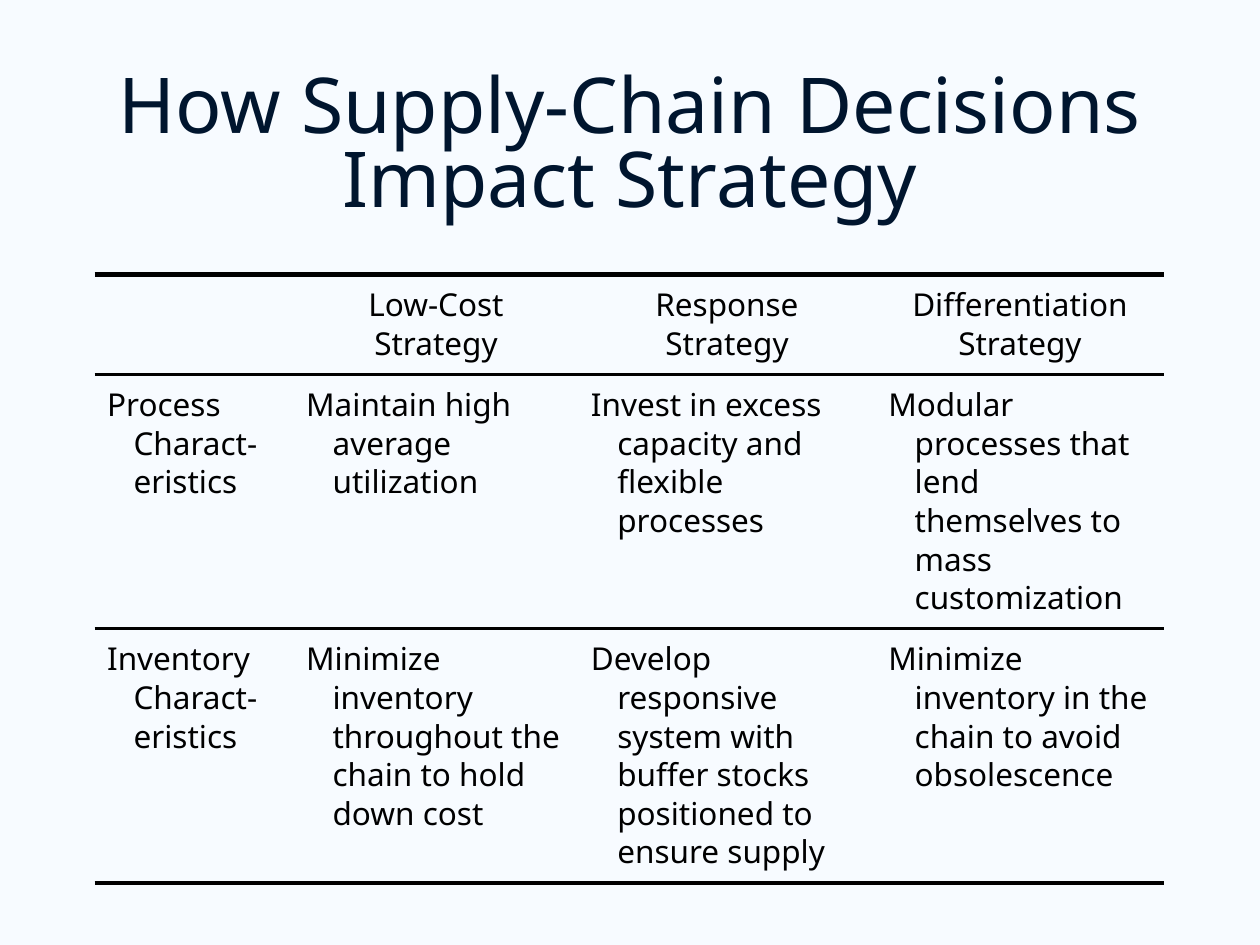
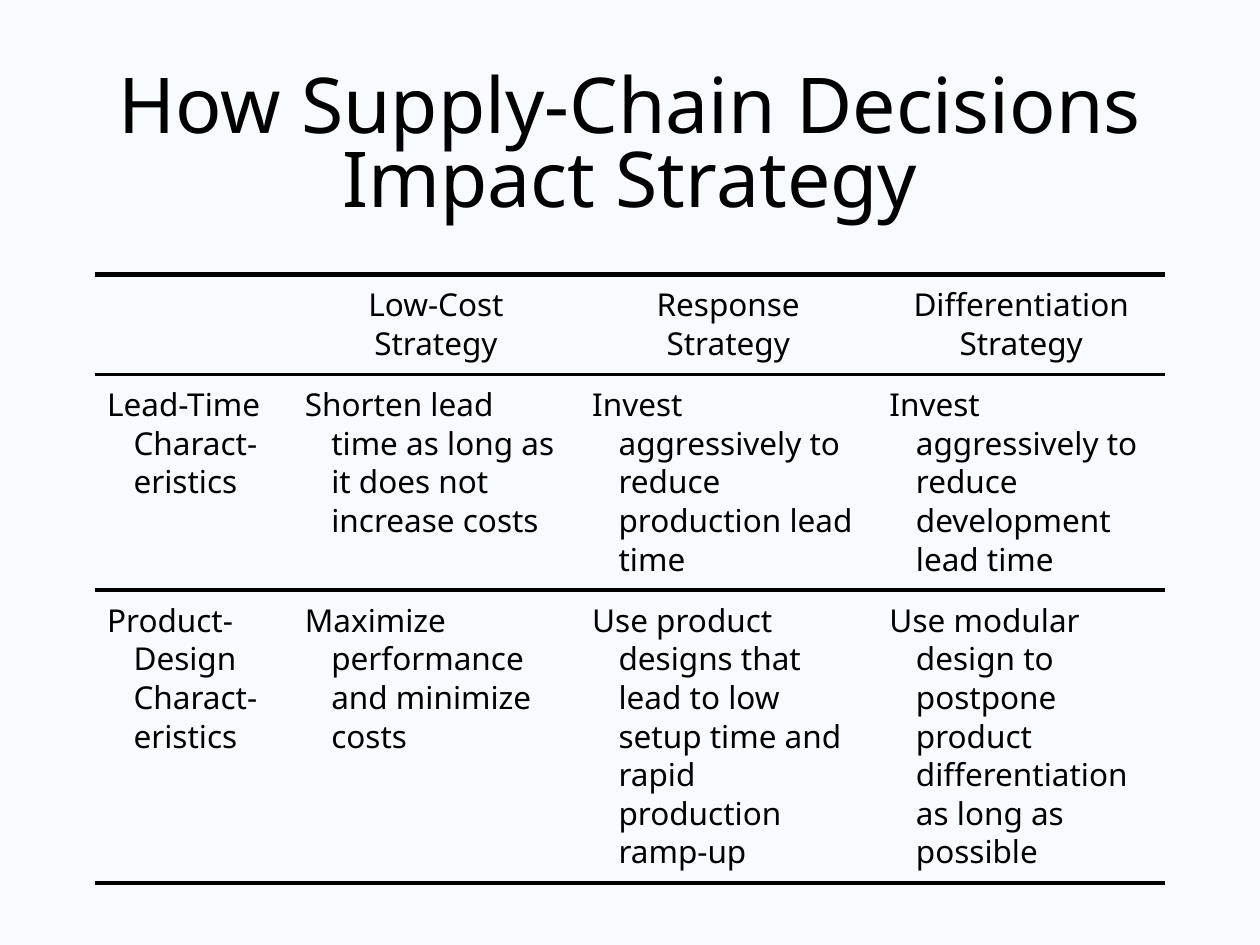
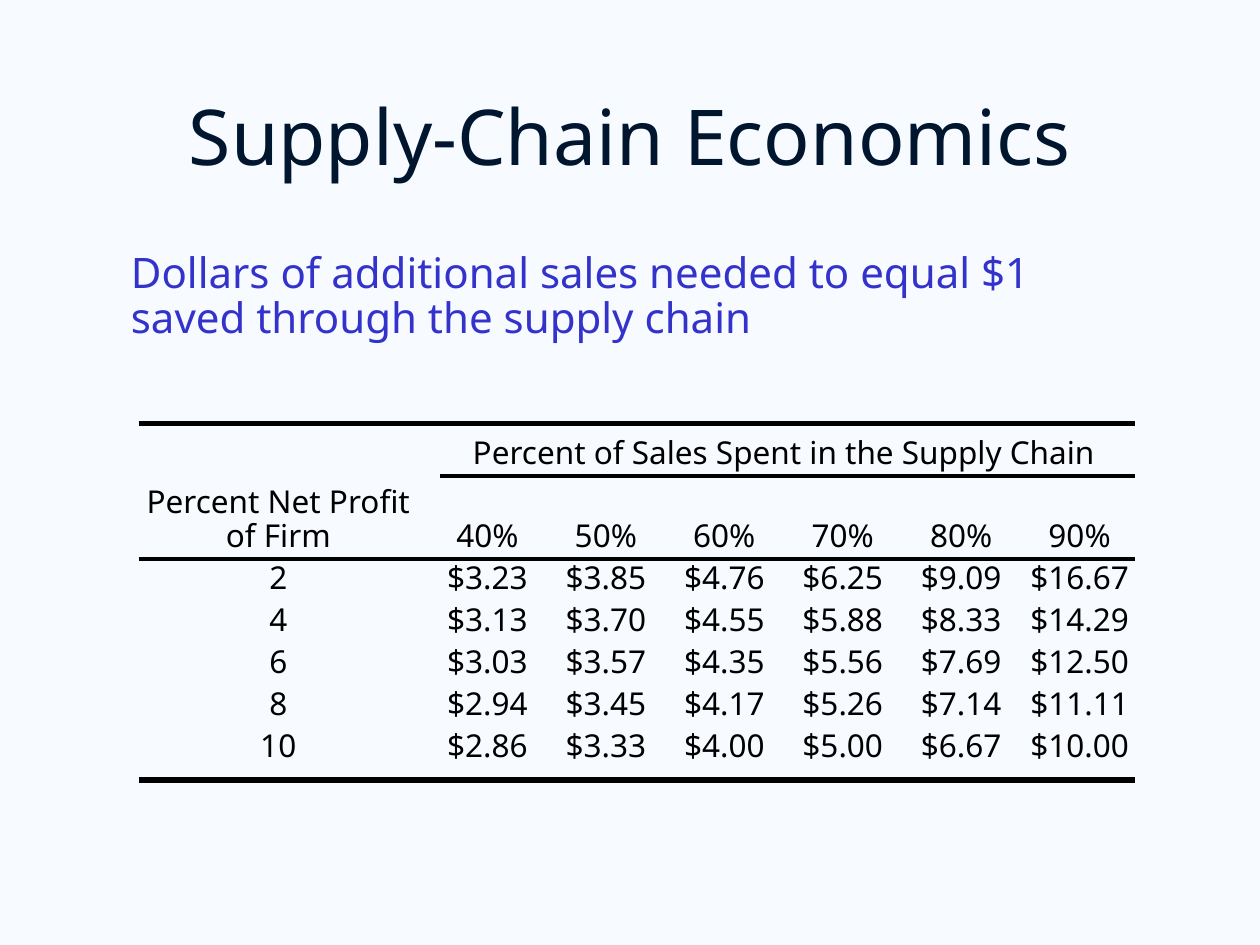
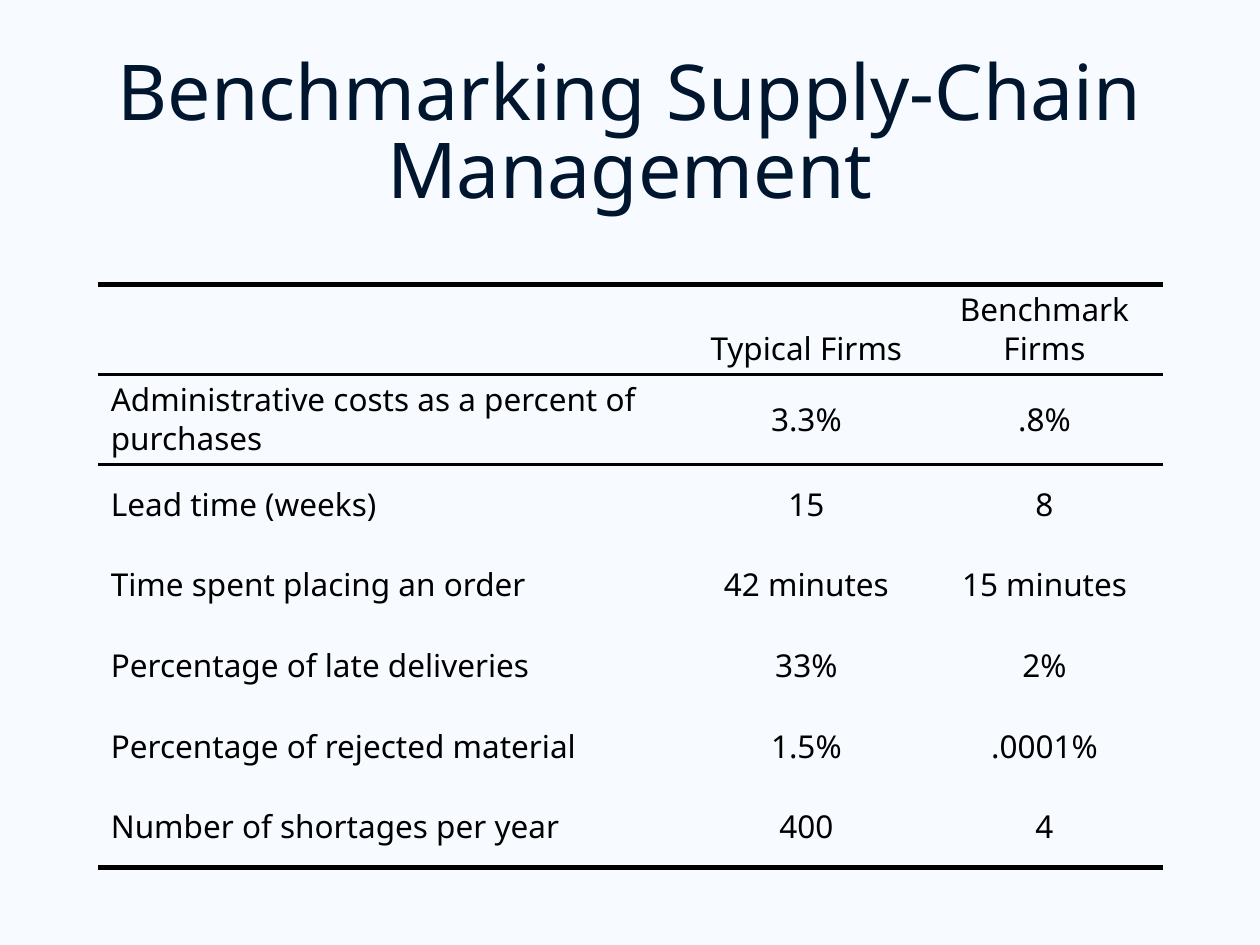
from dataclasses import dataclass

from lxml import etree
from pptx import Presentation
from pptx.dml.color import RGBColor
from pptx.enum import shapes, text
from pptx.oxml.ns import qn
from pptx.slide import Slide
from pptx.util import Inches, Pt

# Shared look
FONT = "Noto Sans"
PALE = RGBColor(0xF7, 0xFB, 0xFF)
NAVY = RGBColor(0x00, 0x15, 0x2E)
BLACK = RGBColor(0x00, 0x00, 0x00)
BLUE = RGBColor(0x33, 0x33, 0xCC)
THICK, THIN = 3, 2.25
BODY_SIZE = 18
NO_STYLE = "{2D5ABB26-0587-4C30-8999-92F81FD0307C}"
LEFT, CENTER = text.PP_ALIGN.LEFT, text.PP_ALIGN.CENTER
TOP, MIDDLE, BOTTOM = (text.MSO_ANCHOR.TOP, text.MSO_ANCHOR.MIDDLE,
                       text.MSO_ANCHOR.BOTTOM)

Box = tuple[float, float, float, float]


@dataclass
class Title:
    text: str
    box: Box
    spacing: float
    color: RGBColor = NAVY


@dataclass
class RuledTable:
    box: Box
    cols: list[float]
    row_heights: list[float]
    rows: list[list[str]]
    margin_y: float
    header_anchor: text.MSO_ANCHOR
    body_anchor: text.MSO_ANCHOR
    body_align: text.PP_ALIGN
    hanging: float = 0


# Text helpers
def format_paragraph(p, size: float, color: RGBColor, spacing: float,
                     align: text.PP_ALIGN = LEFT, before: int = 0) -> None:
    """Format a paragraph; before is a percentage of the line."""
    p.alignment = align
    p.line_spacing = spacing
    if before:
        p.space_before = Pt(0)
        gap = p._p.pPr.find(qn("a:spcBef"))
        gap.remove(gap[0])
        etree.SubElement(gap, qn("a:spcPct"), val=str(before * 1000))
    for r in p.runs:
        r.font.name = FONT
        r.font.size = Pt(size)
        r.font.color.rgb = color


def set_hanging(p, indent: float) -> None:
    p._p.get_or_add_pPr().set("marL", str(Inches(indent)))
    p._p.pPr.set("indent", str(-Inches(indent)))


def set_center_tabs(p, stops: list[float]) -> None:
    tabs = etree.SubElement(p._p.get_or_add_pPr(), qn("a:tabLst"))
    for stop in stops:
        etree.SubElement(tabs, qn("a:tab"), pos=str(Inches(stop)), algn="ctr")


def add_text(parent, box: Box, content: str):
    sp = parent.add_textbox(*map(Inches, box))
    tf = sp.text_frame
    tf.word_wrap = True
    tf.text = content
    return tf


def add_titled_slide(prs, title: Title) -> Slide:
    slide = prs.slides.add_slide(prs.slide_layouts[5])
    sp = slide.shapes.title
    sp.left, sp.top, sp.width, sp.height = map(Inches, title.box)
    tf = sp.text_frame
    tf.text = title.text
    tf.auto_size = text.MSO_AUTO_SIZE.NONE
    tf.vertical_anchor = MIDDLE
    format_paragraph(tf.paragraphs[0], 44, title.color, title.spacing, CENTER)
    return slide


# Lines and tables
def add_rule(parent, x1: float, x2: float, y: float, width: float) -> None:
    line = parent.add_connector(shapes.MSO_CONNECTOR.STRAIGHT,
                                *map(Inches, (x1, y, x2, y)))
    line.line.color.rgb = BLACK
    line.line.width = Pt(width)
    etree.SubElement(line._element.spPr, qn("a:effectLst"))


def add_border(cell, side: str, width: float) -> None:
    ln = etree.SubElement(cell._tc.get_or_add_tcPr(), qn(f"a:{side}"),
                          w=str(Pt(width)))
    fill = etree.SubElement(ln, qn("a:solidFill"))
    etree.SubElement(fill, qn("a:srgbClr"), val=str(BLACK))


def add_ruled_table(slide: Slide, table: RuledTable) -> None:
    rows, last = table.rows, len(table.rows) - 1
    tbl = slide.shapes.add_table(len(rows), len(table.cols),
                                 *map(Inches, table.box)).table
    tbl.first_row = tbl.horz_banding = False
    tbl._tbl.tblPr.find(qn("a:tableStyleId")).text = NO_STYLE
    for col, width in zip(tbl.columns, table.cols):
        col.width = Inches(width)
    for row, height in zip(tbl.rows, table.row_heights):
        row.height = Inches(height)
    for i, row in enumerate(rows):
        header = i == 0
        for j, content in enumerate(row):
            cell = tbl.cell(i, j)
            cell.text = content
            cell.margin_left = cell.margin_right = Inches(0.1)
            cell.margin_top = cell.margin_bottom = Inches(table.margin_y)
            cell.vertical_anchor = (table.header_anchor if header
                                    else table.body_anchor)
            if i <= 1:
                add_border(cell, "lnT", THICK if header else THIN)
            if i in (0, last):
                add_border(cell, "lnB", THIN if header else THICK)
            cell.fill.background()
            p = cell.text_frame.paragraphs[0]
            align = CENTER if header else table.body_align if j else LEFT
            if content:
                format_paragraph(p, BODY_SIZE, BLACK, 0.9, align, 40)
            if table.hanging and not header:
                set_hanging(p, table.hanging)


# Slides 1 and 2: strategy tables
STRATEGIES = ["", "Low-Cost Strategy", "Response Strategy",
              "Differentiation Strategy"]


def add_strategy_slide(prs, color: RGBColor, cols: list[float],
                       heights: list[float], rows: list[list[str]]) -> None:
    slide = add_titled_slide(prs, Title(
        "How Supply-Chain Decisions Impact Strategy",
        (0.75, 0.44, 8.5, 1.47), 0.8, color))
    add_ruled_table(slide, RuledTable(
        (0.75, 2.18, 8.5, 4.33), cols, heights, [STRATEGIES] + rows,
        0.09, TOP, TOP, LEFT, hanging=0.21))


PROCESS_ROWS = [
    ["Process Charact-eristics",
     "Maintain high average utilization",
     "Invest in excess capacity and flexible processes",
     "Modular processes that lend themselves to mass customization"],
    ["Inventory Charact-eristics",
     "Minimize inventory throughout the chain to hold down cost",
     "Develop responsive system with buffer stocks positioned to ensure supply",
     "Minimize inventory in the chain to avoid obsolescence"],
]
DESIGN_ROWS = [
    ["Lead-Time Charact-eristics",
     "Shorten lead time as long as it does not increase costs",
     "Invest aggressively to reduce production lead time",
     "Invest aggressively to reduce development lead time"],
    ["Product-Design Charact-eristics",
     "Maximize performance and minimize costs",
     "Use product designs that lead to low setup time and rapid production "
     "ramp-up",
     "Use modular design to postpone product differentiation as long as "
     "possible"],
]

# Slide 3: sales needed to equal one dollar saved
SALES_ROWS = [
    ["Percent Net Profit"],
    ["of Firm", "40%", "50%", "60%", "70%", "80%", "90%"],
    ["2", "$3.23", "$3.85", "$4.76", "$6.25", "$9.09", "$16.67"],
    ["4", "$3.13", "$3.70", "$4.55", "$5.88", "$8.33", "$14.29"],
    ["6", "$3.03", "$3.57", "$4.35", "$5.56", "$7.69", "$12.50"],
    ["8", "$2.94", "$3.45", "$4.17", "$5.26", "$7.14", "$11.11"],
    ["10", "$2.86", "$3.33", "$4.00", "$5.00", "$6.67", "$10.00"],
]
SALES_TABS = [1.15] + [2.81 + 0.94 * i for i in range(6)]


def add_economics_slide(prs) -> None:
    slide = add_titled_slide(prs, Title(
        "Supply-Chain Economics", (0.75, 0.64, 8.5, 0.97), 0.85))
    tf = add_text(slide.shapes, (0.94, 1.95, 8.11, 0.83),
                  "Dollars of additional sales needed to equal $1 "
                  "saved through the supply chain")
    format_paragraph(tf.paragraphs[0], 24, BLUE, 0.9)

    group = slide.shapes.add_group_shape().shapes
    tf = add_text(group, (3.44, 3.43, 5.56, 0.36),
                  "Percent of Sales Spent in the Supply Chain")
    format_paragraph(tf.paragraphs[0], BODY_SIZE, BLACK, 0.85, CENTER)

    tf = add_text(group, (0.96, 3.81, 8.19, 2.39),
                  "\n".join("\t" + "\t".join(row) for row in SALES_ROWS))
    for i, p in enumerate(tf.paragraphs):
        format_paragraph(p, BODY_SIZE, BLACK, 0.9, before=25 if i > 1 else 0)
        set_center_tabs(p, SALES_TABS)

    for x, y, width in [(1.1, 4.44, THIN), (1.1, 3.36, THICK),
                        (1.1, 6.19, THICK), (3.49, 3.78, THIN)]:
        add_rule(group, x, 9.01, y, width)


# Slide 4: benchmarks
BENCHMARK_ROWS = [
    ["", "Typical Firms", "Benchmark Firms"],
    ["Administrative costs as a percent of purchases", "3.3%", ".8%"],
    ["Lead time (weeks)", "15", "8"],
    ["Time spent placing an order", "42 minutes", "15 minutes"],
    ["Percentage of late deliveries", "33%", "2%"],
    ["Percentage of rejected material", "1.5%", ".0001%"],
    ["Number of shortages per year", "400", "4"],
]


def add_benchmark_slide(prs) -> None:
    slide = add_titled_slide(prs, Title(
        "Benchmarking Supply-Chain Management",
        (0.78, 0.36, 8.44, 1.44), 0.85))
    add_ruled_table(slide, RuledTable(
        (0.78, 2.26, 8.44, 4.45), [4.67, 1.9, 1.88],
        [0.64] * len(BENCHMARK_ROWS), BENCHMARK_ROWS,
        0.05, BOTTOM, MIDDLE, CENTER))


def main() -> None:
    prs = Presentation()
    prs.slide_width, prs.slide_height = Inches(10), Inches(7.5)
    fill = prs.slide_master.background.fill
    fill.solid()
    fill.fore_color.rgb = PALE

    add_strategy_slide(prs, NAVY, [1.58, 2.26, 2.36, 2.29],
                       [0.72, 1.8, 1.8], PROCESS_ROWS)
    add_strategy_slide(prs, BLACK, [1.57, 2.28, 2.36, 2.29],
                       [0.72, 1.53, 2.07], DESIGN_ROWS)
    add_economics_slide(prs)
    add_benchmark_slide(prs)
    prs.save("out.pptx")


if __name__ == "__main__":
    main()
